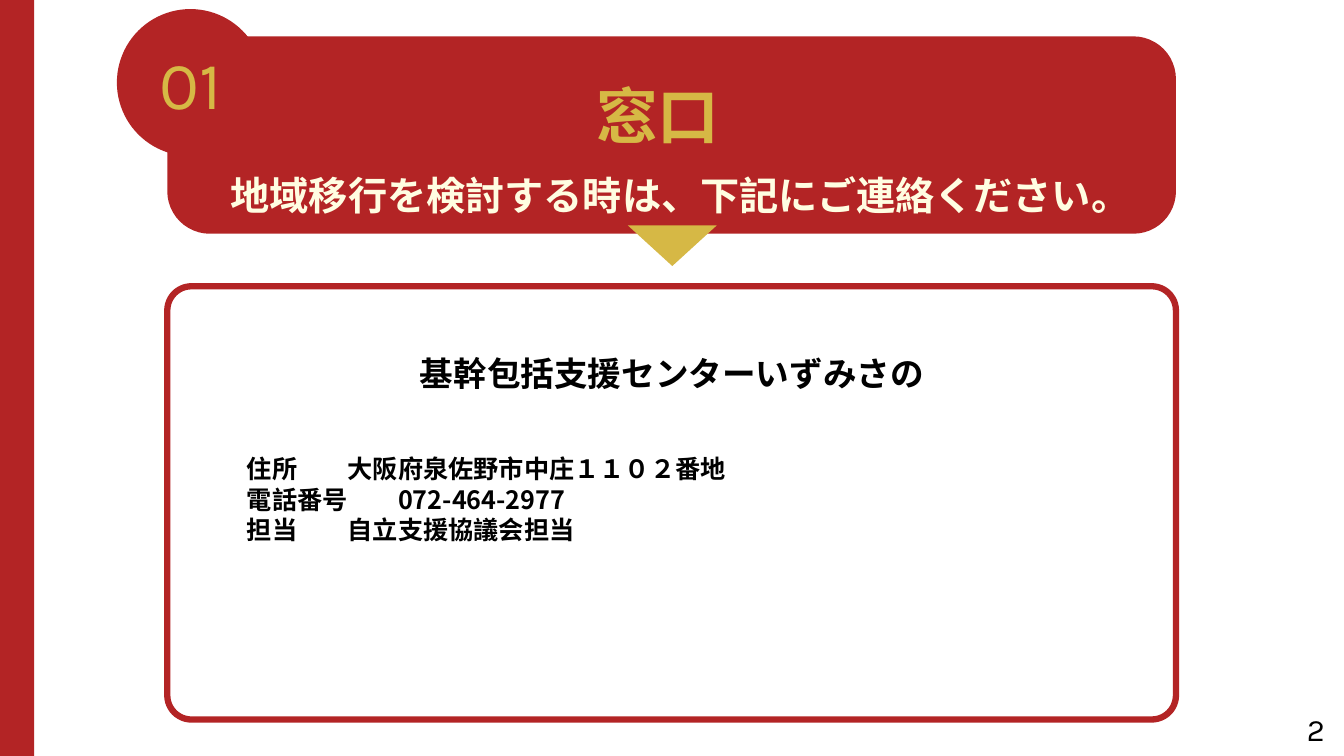
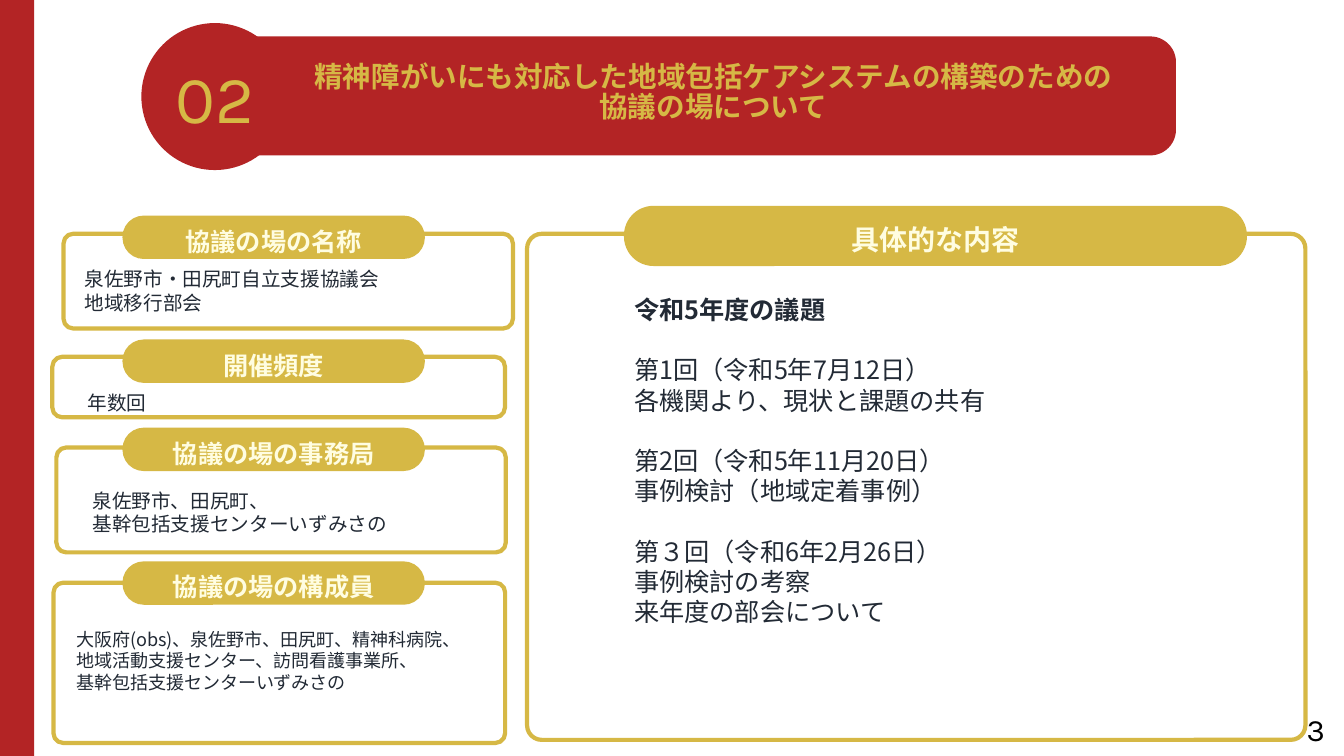
from lxml.etree import SubElement
from pptx import Presentation
from pptx.dml.color import RGBColor
from pptx.enum.shapes import MSO_SHAPE as Shape
from pptx.enum.text import MSO_ANCHOR as Anchor, MSO_AUTO_SIZE as AutoSize, PP_ALIGN as Align
from pptx.oxml.ns import qn
from pptx.util import Pt

# Shared look
RED, GOLD, CREAM = "B32425", "D6B845", "FFFDE1"
WHITE, BLACK, INK = "FFFFFF", "000000", "222A35"
CJK, KARLA = "Noto Sans CJK JP", "Karla"
WIDTH, HEIGHT = 960, 540
HEADER_LEFT, HEADER_TOP, HEADER_WIDTH = 119.5, 26, 720.5
TAB_LEFT, TAB_WIDTH, TAB_HEIGHT = 87.5, 216, 31

# Left column of slide 2: heading, panel box, tab top, text position, size, lines
SECTIONS = [
    ("協議の場の名称", (45.4, 167, 321, 67.7), 154, (53.3, 187.2), 14,
     ["泉佐野市・田尻町自立支援協議会", "地域移行部会"]),
    ("開催頻度", (37.4, 254.9, 323.3, 43.2), 242.5, (55.4, 275.8), 14,
     ["年数回"]),
    ("協議の場の事務局", (40.3, 319.7, 321, 74.9), 305.5, (59, 345.6), 14,
     ["泉佐野市、田尻町、", "基幹包括支援センターいずみさの"]),
    ("協議の場の構成員", (38.2, 416.2, 322.6, 114.5), 401, (47.5, 445), 12.9,
     ["大阪府(obs)、泉佐野市、田尻町、精神科病院、",
      "地域活動支援センター、訪問看護事業所、",
      "基幹包括支援センターいずみさの"]),
]

MEETINGS = [
    ["第1回（令和5年7月12日）", "各機関より、現状と課題の共有"],
    ["第2回（令和5年11月20日）", "事例検討（地域定着事例）"],
    ["第３回（令和6年2月26日）", "事例検討の考察", "来年度の部会について"],
]

CONTACTS = ["住所\t大阪府泉佐野市中庄１１０２番地",
            "電話番号\t072-464-2977",
            "担当\t自立支援協議会担当"]


def paint(color_format, hex_color):
    """Apply a hex colour to a fill or a font."""
    if hasattr(color_format, "solid"):
        color_format.solid()
        color_format.fore_color.rgb = RGBColor.from_string(hex_color)
    else:
        color_format.color.rgb = RGBColor.from_string(hex_color)


def text(frame, lines, size=18, color=INK, font=CJK, bold=False, align=Align.LEFT,
         spacing=None, before=0, tab_stop=None):
    """Append lines as paragraphs; before is the gap above the first of them."""
    for index, line in enumerate(lines):
        paragraph = frame.add_paragraph() if frame.text else frame.paragraphs[0]
        paragraph.text = line
        paragraph.alignment = align
        paragraph.line_spacing = spacing
        paragraph.space_before = Pt(0 if index else before)
        properties = paragraph._p.get_or_add_pPr()
        properties.set("marL", "0")
        properties.set("indent", "0")
        SubElement(properties, qn("a:buNone"))
        if tab_stop:
            stops = SubElement(properties, qn("a:tabLst"))
            SubElement(stops, qn("a:tab"), pos=str(Pt(tab_stop)), algn="l")
        for run in paragraph.runs:
            run.font.size, run.font.bold, run.font.name = Pt(size), bold, font
            paint(run.font, color)
            SubElement(run._r.get_or_add_rPr(), qn("a:ea"), typeface=CJK)


def block(slide, kind, box, fill, line=None, line_width=3, radius=None):
    """Add a flat shape; radius is the corner radius in points."""
    shape = slide.shapes.add_shape(kind, *map(Pt, box))
    shape.shadow.inherit = False
    paint(shape.fill, fill)
    if line:
        paint(shape.line.fill, line)
        shape.line.width = Pt(line_width)
    else:
        shape.line.fill.background()
    if radius:
        shape.adjustments[0] = radius / min(box[2:])
    return shape


def label(slide, box, lines, **style):
    frame = slide.shapes.add_textbox(*map(Pt, box)).text_frame
    frame.word_wrap = True
    text(frame, lines, **style)


def panel(slide, box, color, radius, line_width=3):
    block(slide, Shape.ROUNDED_RECTANGLE, box, WHITE, color, line_width, radius)


def tab(slide, box, heading, size, top_inset):
    pill = block(slide, Shape.ROUNDED_RECTANGLE, box, GOLD, radius=box[3] * 0.49)
    frame = pill.text_frame
    frame.vertical_anchor = Anchor.TOP
    frame.margin_top = Pt(top_inset)
    text(frame, [heading], size=size, color=CREAM, bold=True, align=Align.CENTER)


def place(placeholder, box):
    """Move a placeholder to its box, in front of everything drawn so far."""
    placeholder.left, placeholder.top, placeholder.width, placeholder.height = map(Pt, box)
    element = placeholder.element
    element.getparent().append(element)
    frame = placeholder.text_frame
    frame.word_wrap, frame.auto_size = True, AutoSize.NONE
    frame.vertical_anchor = Anchor.TOP
    return frame


def header(slide, title, title_box, title_size, height, number, circle_at, spacing=None):
    """Red side band, title band and numbered circle."""
    block(slide, Shape.RECTANGLE, (0, 0, 24.5, HEIGHT), RED)
    band = (HEADER_LEFT, HEADER_TOP, HEADER_WIDTH, height)
    block(slide, Shape.ROUNDED_RECTANGLE, band, RED, radius=height * 0.216)
    text(place(slide.shapes.title, title_box), [title], size=title_size, color=GOLD,
         bold=True, align=Align.CENTER, spacing=spacing)
    circle = block(slide, Shape.OVAL, (*circle_at, 105, 105), RED)
    circle.text_frame.word_wrap = False
    circle.text_frame.vertical_anchor = Anchor.MIDDLE
    text(circle.text_frame, [number], size=48, color=GOLD, font=KARLA, align=Align.CENTER)


def page_number(slide, number):
    label(slide, (729.5, 504, 224, 29), [number], size=22.2, color=BLACK, font=KARLA,
          align=Align.RIGHT)


def contact_slide(slide):
    header(slide, "窓口", (236, 52, 468, 70.5), 44, 141, "01", (83.5, 6.5))
    label(slide, (157.7, 118.8, 668, 41), ["地域移行を検討する時は、下記にご連絡ください。"],
          size=28, color=CREAM, font=KARLA, bold=True)
    panel(slide, (HEADER_LEFT, 204.5, HEADER_WIDTH, 309.5), RED, 17.3, line_width=4.5)
    block(slide, Shape.FLOWCHART_MERGE, (448.5, 161, 63.5, 29), GOLD)

    # Contact details
    contact = place(slide.placeholders[1], (169.2, 234, 621.5, 193))
    text(contact, ["基幹包括支援センターいずみさの"], size=24, color=BLACK, font="Arial",
         bold=True, align=Align.CENTER, spacing=1.5)
    text(contact, CONTACTS, color=BLACK, bold=True, before=43.2, tab_stop=108)
    page_number(slide, "2")


def council_slide(slide):
    header(slide, "精神障がいにも対応した地域包括ケアシステムの構築のための\v協議の場について",
           (211.7, 41, 595.5, 70.5), 20.4, 85, "02", (101, 16.5), spacing=0.9)

    # Left column
    for heading, box, tab_top, text_at, size, lines in SECTIONS:
        panel(slide, box, GOLD, 7)
        tab(slide, (TAB_LEFT, tab_top, TAB_WIDTH, TAB_HEIGHT), heading, 18, 3)
        label(slide, (*text_at, 302.5, 20 + 17 * len(lines)), lines, size=size)

    # Agenda
    panel(slide, (376.5, 167, 556, 361.5), GOLD, 10.5)
    tab(slide, (445.7, 147, 445, 43), "具体的な内容", 20, 6)
    agenda = place(slide.placeholders[1], (445.7, 206.6, 445, 285))
    text(agenda, ["令和5年度の議題"], bold=True)
    for meeting in MEETINGS:
        text(agenda, meeting, before=21.6)
    page_number(slide, "3")


def main():
    deck = Presentation()
    deck.slide_width, deck.slide_height = Pt(WIDTH), Pt(HEIGHT)
    title_and_content = deck.slide_layouts[1]
    for build in (contact_slide, council_slide):
        build(deck.slides.add_slide(title_and_content))
    deck.save("out.pptx")


if __name__ == "__main__":
    main()
